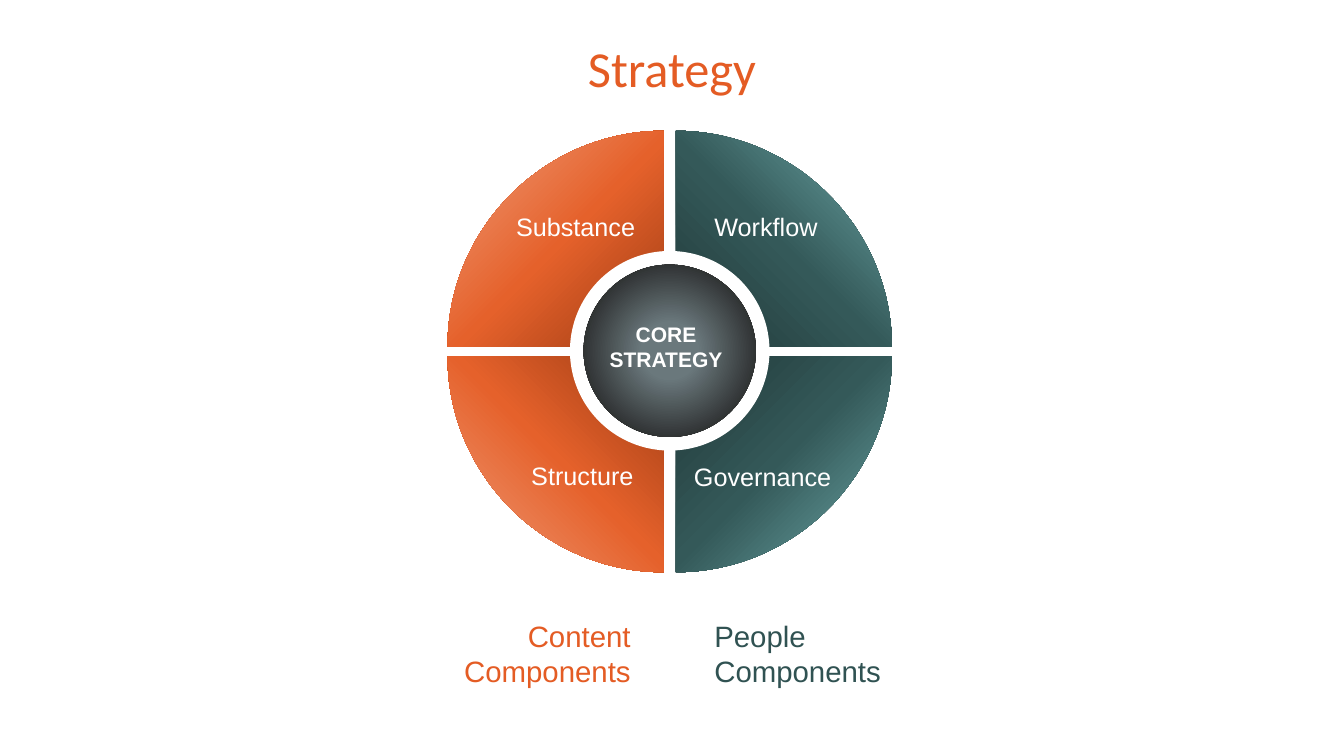
from lxml import etree
from pptx import Presentation
from pptx.dml.color import RGBColor
from pptx.enum.shapes import MSO_SHAPE
from pptx.enum.text import MSO_ANCHOR, PP_ALIGN
from pptx.oxml import parse_xml
from pptx.oxml.ns import nsdecls, qn
from pptx.util import Inches, Pt

COLORS = {
    "white": "FFFFFF",
    "orange": "E45C24",
    "teal": "305252",
    "orange_dark": "9D3C13",
    "orange_mid": "E5612B",
    "orange_light": "EF9D7C",
    "teal_dark": "203737",
    "teal_mid": "345959",
    "teal_light": "6FABAB",
    "hub_center": "6A787C",
    "hub_edge": "222222",
}
ORANGE_STOPS = [(0, "orange_dark"), (48, "orange_mid"), (100, "orange_light")]
TEAL_STOPS = [(0, "teal_dark"), (48, "teal_mid"), (100, "teal_light")]
HUB_STOPS = [(0, "hub_center"), (23, "hub_center"), (83, "hub_edge")]
WEDGE = 2.86
ARC_HANDLE = 0.55


def set_plain(shape):
    shape.shadow.inherit = False
    shape.line.fill.background()


def set_gradient(shape, stops, angle=None):
    shape.fill.background()
    gradient = parse_xml(f'<a:gradFill {nsdecls("a")} rotWithShape="1"><a:gsLst/></a:gradFill>')
    for position, color in stops:
        stop = etree.SubElement(gradient[0], qn("a:gs"), pos=str(position * 1000))
        etree.SubElement(stop, qn("a:srgbClr"), val=COLORS[color])
    if angle is None:
        circle = etree.SubElement(gradient, qn("a:path"), path="circle")
        etree.SubElement(circle, qn("a:fillToRect"), l="50000", t="50000", r="50000", b="50000")
    else:
        etree.SubElement(gradient, qn("a:lin"), ang=str(angle * 60000), scaled="0")
    properties = shape.element.spPr
    properties.replace(properties.find(qn("a:noFill")), gradient)


def add_label(shapes, box, lines, size, color, align=PP_ALIGN.LEFT, font="Arial",
              bold=False, left_inset=0.2, right_inset=0.1, spacing=None):
    frame = shapes.add_textbox(*map(Inches, box)).text_frame
    frame.word_wrap = True
    frame.vertical_anchor = MSO_ANCHOR.MIDDLE
    frame.margin_left, frame.margin_right = Inches(left_inset), Inches(right_inset)
    frame.text = lines
    for paragraph in frame.paragraphs:
        paragraph.alignment = align
        paragraph.line_spacing = spacing
        paragraph.font.name = font
        paragraph.font.size = Pt(size)
        paragraph.font.bold = bold
        paragraph.font.color.rgb = RGBColor.from_string(COLORS[color])


def add_wedge(shapes, corner_x, corner_y, side, level):
    def outline_point(across, down, origin_x=corner_x, origin_y=corner_y):
        return (Inches(origin_x + side * across * WEDGE),
                Inches(origin_y + level * down * WEDGE))

    builder = shapes.build_freeform(*outline_point(0, 0))
    builder.add_line_segments([outline_point(1, 0), outline_point(0, 1)], close=True)
    wedge = builder.convert_to_shape()
    chord = list(wedge.element.iter(qn("a:lnTo")))[1]
    arc = etree.Element(qn("a:cubicBezTo"))
    local_x = 0 if side > 0 else WEDGE
    local_y = 0 if level > 0 else WEDGE
    for across, down in ((1, ARC_HANDLE), (ARC_HANDLE, 1), (0, 1)):
        x, y = outline_point(across, down, local_x, local_y)
        etree.SubElement(arc, qn("a:pt"), x=str(x), y=str(y))
    chord.getparent().replace(chord, arc)
    return wedge


def add_quadrant(slide, box, side, level, name, label_box, right_inset=0.1):
    left, top, width, height = box
    corner_x = left + (width - WEDGE if side > 0 else WEDGE)
    corner_y = top + (height - WEDGE if level > 0 else WEDGE)
    shapes = slide.shapes.add_group_shape().shapes
    wedge = add_wedge(shapes, corner_x, corner_y, side, level)
    set_plain(wedge)
    angle = {(1, -1): 315, (1, 1): 45, (-1, -1): 225, (-1, 1): 135}[side, level]
    set_gradient(wedge, TEAL_STOPS if side > 0 else ORANGE_STOPS, angle)
    label_x, label_y, label_width = label_box
    add_label(shapes, (left + label_x, top + label_y, label_width, 1.12), name, 24, "white",
              PP_ALIGN.LEFT if side > 0 else PP_ALIGN.RIGHT, right_inset=right_inset)


def add_hub(slide, box):
    left, top, size = box
    border = 0.18
    inner = size - 2 * border
    shapes = slide.shapes.add_group_shape().shapes
    ring = shapes.add_shape(MSO_SHAPE.OVAL, *map(Inches, (left, top, size, size)))
    ring.fill.solid()
    ring.fill.fore_color.rgb = RGBColor.from_string(COLORS["white"])
    core = shapes.add_shape(
        MSO_SHAPE.OVAL, *map(Inches, (left + border, top + border, inner, inner)))
    set_gradient(core, HUB_STOPS)
    for disc in (ring, core):
        set_plain(disc)
    add_label(shapes, (left + border, top + 0.7, inner, 1.12), "CORE\nSTRATEGY", 20,
              "white", PP_ALIGN.CENTER, bold=True, left_inset=0)


def add_wheel(slide, box):
    left, top, width, height = box
    add_quadrant(slide, box, 1, -1, "Workflow", (3.33, 0.7, 2.35))
    add_quadrant(slide, box, 1, 1, "Governance", (3.06, 4.01, 2.41))
    add_quadrant(slide, box, -1, -1, "Substance", (0.23, 0.7, 2.35))
    add_quadrant(slide, box, -1, 1, "Structure", (0.25, 4, 2.41), right_inset=0.2)
    hub = 2.64
    add_hub(slide, (left + (width - hub) / 2, top + (height - hub) / 2 - 0.01, hub))


def add_captions(slide, box):
    left, top, width, height = box
    people_width = 3.15
    add_label(slide.shapes, (left, top, 3, height), "Content Components", 28, "orange",
              PP_ALIGN.RIGHT)
    add_label(slide.shapes, (left + width - people_width, top, people_width, height),
              "People Components", 28, "teal")


def add_title(slide, box):
    add_label(slide.shapes, box, "Strategy", 48, "orange", PP_ALIGN.CENTER, font="Calibri",
              left_inset=0.1, spacing=0.9)


def main():
    presentation = Presentation()
    presentation.slide_width = Inches(17.78)
    presentation.slide_height = Inches(10)
    slide = presentation.slides.add_slide(presentation.slide_layouts[6])
    add_wheel(slide, (5.92, 1.73, 5.88, 5.84))
    add_captions(slide, (5.44, 8.08, 6.96, 1.12))
    add_title(slide, (0, 0.34, 17.78, 1.21))
    presentation.save("out.pptx")


if __name__ == "__main__":
    main()
